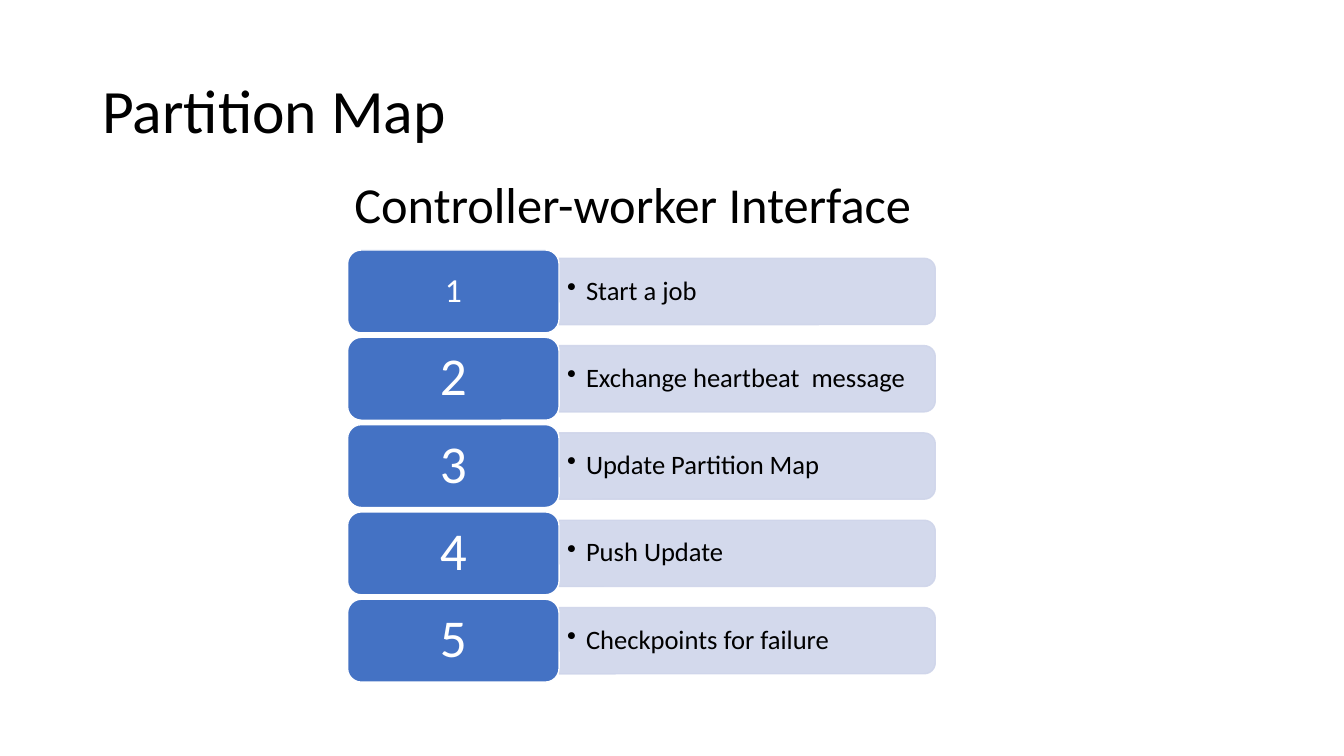
from lxml import etree
from pptx import Presentation
from pptx import util as u
from pptx.dml.color import RGBColor
from pptx.enum import shapes, text
from pptx.oxml.ns import qn

TITLE = "Partition Map"
HEADING = "Controller-worker Interface"
STEPS = [
    ("1", 24, "Start a job"),
    ("2", 38, "Exchange heartbeat  message"),
    ("3", 38, "Update Partition Map"),
    ("4", 38, "Push Update"),
    ("5", 38, "Checkpoints for failure"),
]
COLORS = {"ink": "000000", "white": "FFFFFF", "number": "4472C4", "bar": "CFD5EA"}
FONT = "Calibri"

LEFT, TOP, PITCH = 8.76, 6.3, 2.2
NUMBER_WIDTH, NUMBER_HEIGHT = 5.33, 2.09
BAR_WIDTH, BAR_HEIGHT = 9.48, 1.67
LABEL_WIDTH, LABEL_HEIGHT = 9.4, 1.5
BAR_OPACITY = 90


def color(name):
    return RGBColor.from_string(COLORS[name])


def write(shape, words, size, ink, align=text.PP_ALIGN.LEFT,
          anchor=text.MSO_ANCHOR.MIDDLE, insets=(0.25, 0.13)):
    frame = shape.text_frame
    frame.text = words
    frame.word_wrap = True
    frame.vertical_anchor = anchor
    frame.margin_left = frame.margin_right = u.Cm(insets[0])
    frame.margin_top = frame.margin_bottom = u.Cm(insets[1])
    para = frame.paragraphs[0]
    para.alignment = align
    para.line_spacing = 0.9
    font = para.runs[0].font
    font.name, font.size = FONT, u.Pt(size)
    font.color.rgb = color(ink)
    return para


def add_block(page, kind, box, fill, line):
    shape = page.shapes.add_shape(kind, *map(u.Cm, box))
    shape.shadow.inherit = False
    shape.fill.solid()
    shape.fill.fore_color.rgb = color(fill)
    shape.line.color.rgb = color(line)
    shape.line.width = u.Pt(1)
    return shape


def set_opacity(shape, percent):
    for tint in shape._element.spPr.iter(qn("a:srgbClr")):
        etree.SubElement(tint, qn("a:alpha")).set("val", str(percent * 1000))


def add_bullet(para, indent):
    properties = para._p.get_or_add_pPr()
    properties.set("marL", str(u.Cm(indent)))
    properties.set("indent", str(-u.Cm(indent)))
    etree.SubElement(properties, qn("a:buChar")).set("char", "•")


def add_step(page, index, number, size, label):
    top = TOP + index * PITCH
    middle = top + NUMBER_HEIGHT / 2
    right = LEFT + NUMBER_WIDTH

    bar_box = (right + (BAR_WIDTH - BAR_HEIGHT) / 2, middle - BAR_WIDTH / 2,
               BAR_HEIGHT, BAR_WIDTH)
    bar = add_block(page, shapes.MSO_SHAPE.ROUND_2_SAME_RECTANGLE, bar_box, "bar", "bar")
    bar.rotation = 90
    set_opacity(bar, BAR_OPACITY)

    label_box = (right, middle - LABEL_HEIGHT / 2, LABEL_WIDTH, LABEL_HEIGHT)
    caption = page.shapes.add_textbox(*map(u.Cm, label_box))
    add_bullet(write(caption, label, 19, "ink", insets=(0.2, 0.1)), 0.48)

    number_box = (LEFT, top, NUMBER_WIDTH, NUMBER_HEIGHT)
    tile = add_block(page, shapes.MSO_SHAPE.ROUNDED_RECTANGLE, number_box, "number", "white")
    write(tile, number, size, "white", text.PP_ALIGN.CENTER)


def main():
    deck = Presentation()
    deck.slide_width, deck.slide_height = u.Cm(33.87), u.Cm(19.05)
    page = deck.slides.add_slide(deck.slide_layouts[5])

    title = page.shapes.title
    title.left, title.top, title.width, title.height = map(u.Cm, (2.33, 1.01, 29.21, 3.68))
    write(title, TITLE, 44, "ink")

    heading = page.shapes.add_textbox(*map(u.Cm, (8.68, 4.4, 22.86, 1.7)))
    para = write(heading, HEADING, 36, "ink", anchor=text.MSO_ANCHOR.TOP)
    para.space_before = u.Pt(5)

    for index, step in enumerate(STEPS):
        add_step(page, index, *step)

    deck.save("out.pptx")


if __name__ == "__main__":
    main()
